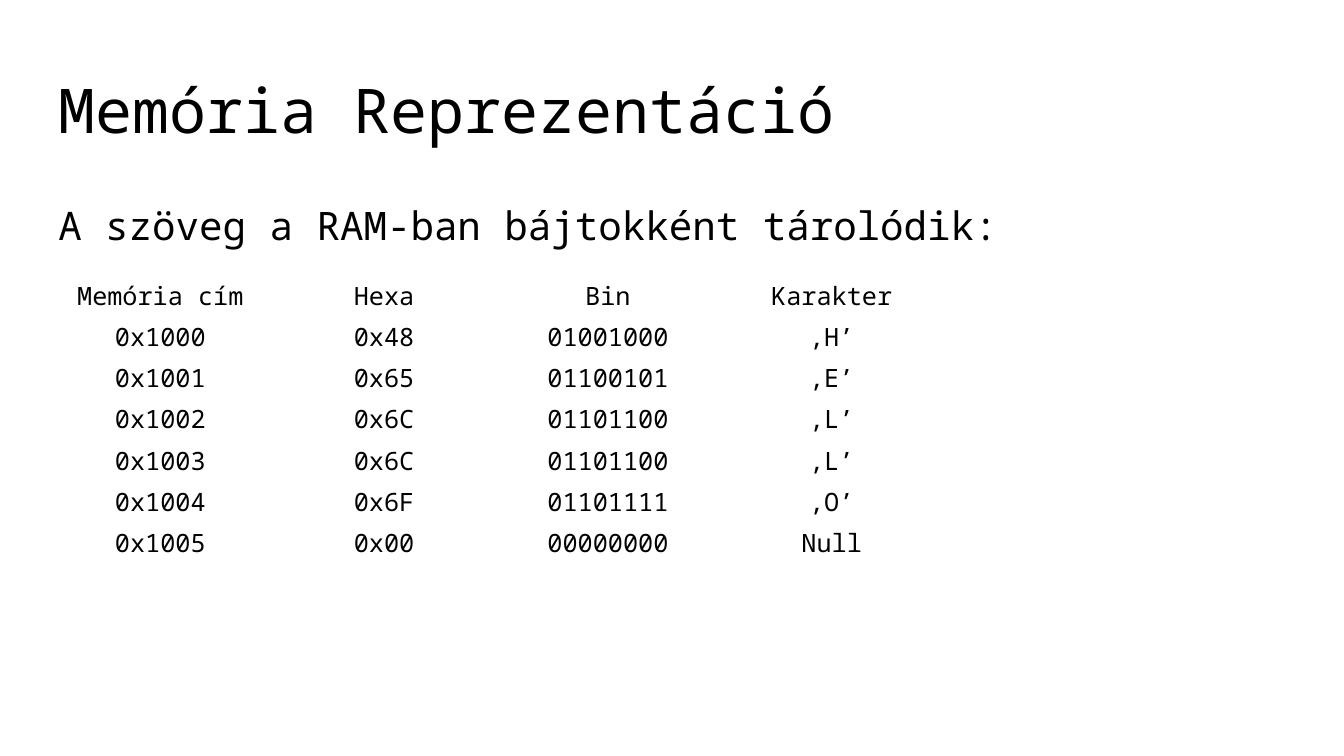
import pptx
import pptx.dml.color
import pptx.enum.text
import pptx.util
from pptx.util import Inches

BLACK = pptx.dml.color.RGBColor(0x00, 0x00, 0x00)
WHITE = pptx.dml.color.RGBColor(0xFF, 0xFF, 0xFF)
FONT = "Noto Sans Mono"
LEFT = Inches(0.48)

HEADINGS = ["Memória cím", "Hexa", "Bin", "Karakter"]
FIRST_ADDRESS = 0x1000
STORED_BYTES = [
    (0x48, "‚H’"),
    (0x65, "‚E’"),
    (0x6C, "‚L’"),
    (0x6C, "‚L’"),
    (0x6F, "‚O’"),
    (0x00, "Null"),
]


def write(para, text, size):
    para.text = text
    for span in para.runs:
        span.font.name = FONT
        span.font.size = pptx.util.Pt(size)
        span.font.color.rgb = BLACK


def add_text(page, text, top, height, size, anchor):
    box = page.shapes.add_textbox(LEFT, top, Inches(11.5), height)
    frame = box.text_frame
    frame.word_wrap = True
    frame.vertical_anchor = anchor
    para = frame.paragraphs[0]
    para.line_spacing = 0.9
    write(para, text, size)
    return para


def memory_rows():
    """Return the address, hexadecimal, binary and character of each byte."""
    return [
        [f"0x{address:04X}", f"0x{value:02X}", f"{value:08b}", character]
        for address, (value, character) in enumerate(STORED_BYTES, FIRST_ADDRESS)
    ]


def add_table(page, rows, top, column_width, row_height):
    columns = len(rows[0])
    table = page.shapes.add_table(
        len(rows), columns, LEFT, top, column_width * columns, row_height * len(rows)
    ).table
    table.first_row = False
    table.horz_banding = False
    for row_index, row in enumerate(rows):
        for column_index, text in enumerate(row):
            cell = table.cell(row_index, column_index)
            cell.fill.background()
            para = cell.text_frame.paragraphs[0]
            para.alignment = pptx.enum.text.PP_ALIGN.CENTER
            write(para, text, 18)


def main():
    deck = pptx.Presentation()
    deck.slide_width = Inches(13.33)
    deck.slide_height = Inches(7.5)
    page = deck.slides.add_slide(deck.slide_layouts[6])
    page.background.fill.solid()
    page.background.fill.fore_color.rgb = WHITE

    # Title and introduction
    anchors = pptx.enum.text.MSO_ANCHOR
    add_text(page, "Memória Reprezentáció", Inches(0.4), Inches(1.45), 44, anchors.MIDDLE)
    intro = add_text(page, "A szöveg a RAM-ban bájtokként tárolódik:",
                     Inches(2), Inches(0.56), 28, anchors.TOP)
    intro.space_before = pptx.util.Pt(10)

    # Memory contents
    add_table(page, [HEADINGS] + memory_rows(), Inches(2.71), Inches(2.22), Inches(0.41))

    deck.save("out.pptx")


if __name__ == "__main__":
    main()
